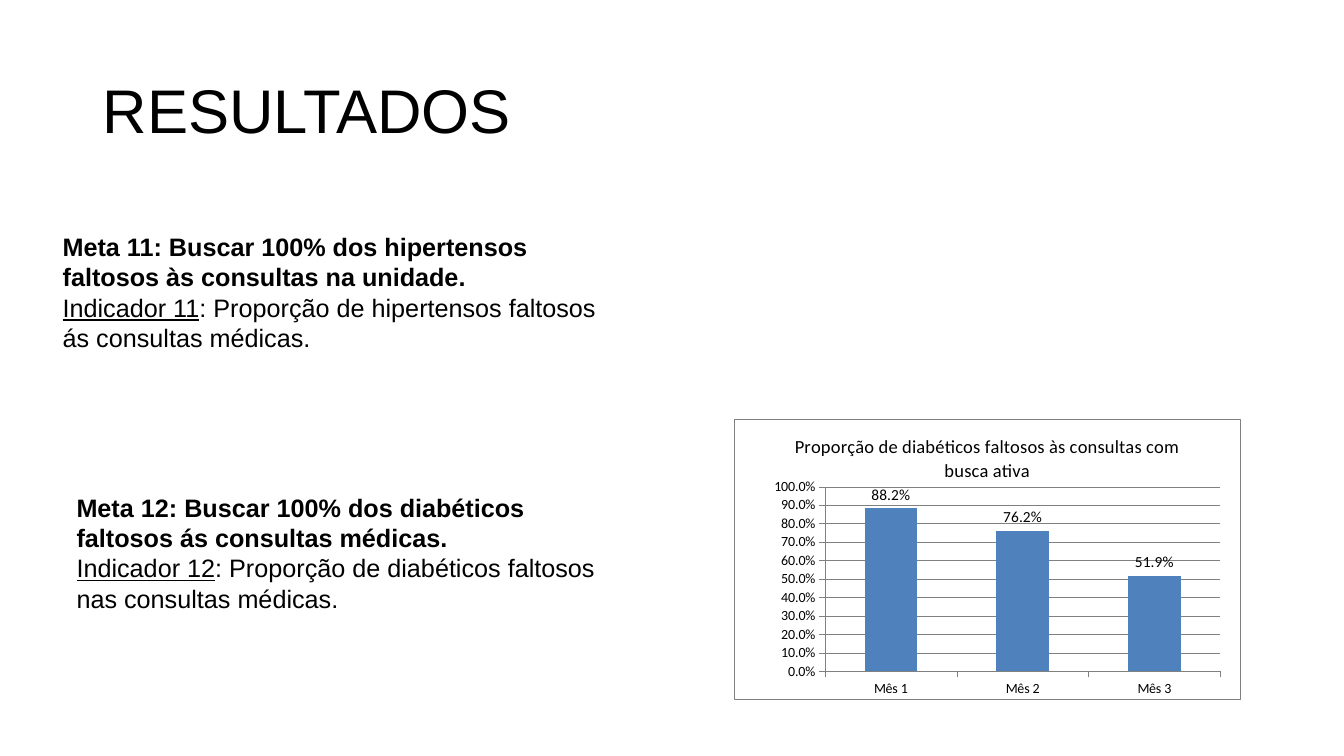
"""Build the results slide with two goals and a column chart."""
from pptx import Presentation
from pptx import chart as ch
from pptx import oxml
from pptx import util as u
from pptx.chart import data
from pptx.dml import color
from pptx.enum import chart as kinds
from pptx.enum import text
from pptx.oxml import ns


def paint(hue):
    return color.RGBColor.from_string(hue)


def write(para, words, size=18, face="Arial", hue="000000", bold=False, under=False):
    run = para.add_run()
    run.text = words
    font = run.font
    font.size, font.name, font.bold, font.underline = u.Pt(size), face, bold, under
    font.color.rgb = paint(hue)


deck = Presentation()
deck.slide_width, deck.slide_height = u.Cm(33.87), u.Cm(19.05)
slide = deck.slides.add_slide(deck.slide_layouts[5])

title = slide.shapes.title
title.left, title.top, title.width, title.height = u.Cm(2.33), u.Cm(1.01), u.Cm(29.21), u.Cm(3.68)
title.text_frame.vertical_anchor = text.MSO_ANCHOR.MIDDLE
head = title.text_frame.paragraphs[0]
head.alignment = text.PP_ALIGN.LEFT
head.line_spacing = 0.9
write(head, "RESULTADOS", size=44)

goals = [
    (1.33, 5.71, 14.05, "Meta 11: Buscar 100% dos hipertensos faltosos às consultas na unidade.",
     "Indicador 11", ": Proporção de hipertensos faltosos ás consultas médicas."),
    (1.68, 12.28, 14.38, "Meta 12: Buscar 100% dos diabéticos faltosos ás consultas médicas.",
     "Indicador 12", ": Proporção de diabéticos faltosos nas consultas médicas."),
]
for left, top, width, goal, mark, rest in goals:
    box = slide.shapes.add_textbox(u.Cm(left), u.Cm(top), u.Cm(width), u.Cm(4.11))
    frame = box.text_frame
    frame.word_wrap = True
    frame.auto_size = text.MSO_AUTO_SIZE.SHAPE_TO_FIT_TEXT
    write(frame.paragraphs[0], goal, bold=True)
    para = frame.add_paragraph()
    write(para, mark, under=True)
    write(para, rest)

name = "Proporção de diabéticos faltosos às consultas com busca ativa"
rates = data.CategoryChartData(number_format="0.0%")
rates.categories = ["Mês 1", "Mês 2", "Mês 3"]
rates.add_series(name, [0.882, 0.762, 0.519])
chart = slide.shapes.add_chart(
    kinds.XL_CHART_TYPE.COLUMN_CLUSTERED,
    u.Cm(18.49), u.Cm(10.57), u.Cm(12.78), u.Cm(7.06), rates).chart
chart.has_legend = False
chart.font.size, chart.font.name = u.Pt(11), "Calibri"
chart.font.color.rgb = paint("000000")
chart.has_title = True
chart.chart_title.include_in_layout = False
write(chart.chart_title.text_frame.paragraphs[0], name, size=13.2, face="Calibri")

months, scale = chart.category_axis, chart.value_axis
scale.minimum_scale, scale.maximum_scale, scale.major_unit = 0, 1, 0.1
scale.has_major_gridlines = True
scale.tick_labels.number_format = "0.0%"
scale.tick_labels.number_format_is_linked = False
for axis in (months, scale):
    axis.major_tick_mark = kinds.XL_TICK_MARK.OUTSIDE
    font = axis.tick_labels.font
    font.size, font.name = u.Pt(10), "Calibri"
    font.color.rgb = paint("000000")
for part in (months, scale, scale.major_gridlines):
    part.format.line.color.rgb = paint("808080")
    part.format.line.width = u.Pt(0.25)

plot = chart.plots[0]
plot.gap_width = 150
plot.vary_by_categories = False
bars = plot.series[0]
bars.format.fill.solid()
bars.format.fill.fore_color.rgb = paint("4F81BD")
labels = bars.data_labels
labels.show_value = True
labels.position = kinds.XL_LABEL_POSITION.OUTSIDE_END
labels.number_format, labels.number_format_is_linked = "0.0%", False

spaces = ns.nsdecls("c", "a")
area = chart._chartSpace.chart.plotArea
for old in area.findall(ns.qn("c:layout")):
    area.remove(old)
sides = "".join(f'<c:{key} val="{val}"/>' for key, val in (
    ("layoutTarget", "inner"), ("xMode", "edge"), ("yMode", "edge"),
    ("x", 0.18), ("y", 0.24), ("w", 0.78), ("h", 0.66)))
area.insert(0, oxml.parse_xml(
    f"<c:layout {spaces}><c:manualLayout>{sides}</c:manualLayout></c:layout>"))
white = '<a:solidFill><a:srgbClr val="FFFFFF"/></a:solidFill>'
edge = '<a:ln w="3175"><a:solidFill><a:srgbClr val="808080"/></a:solidFill></a:ln>'
for node, line in ((area[-1], "<a:ln><a:noFill/></a:ln>"), (chart._chartSpace.chart, edge)):
    node.addnext(oxml.parse_xml(f"<c:spPr {spaces}>{white}{line}</c:spPr>"))

deck.save("out.pptx")
